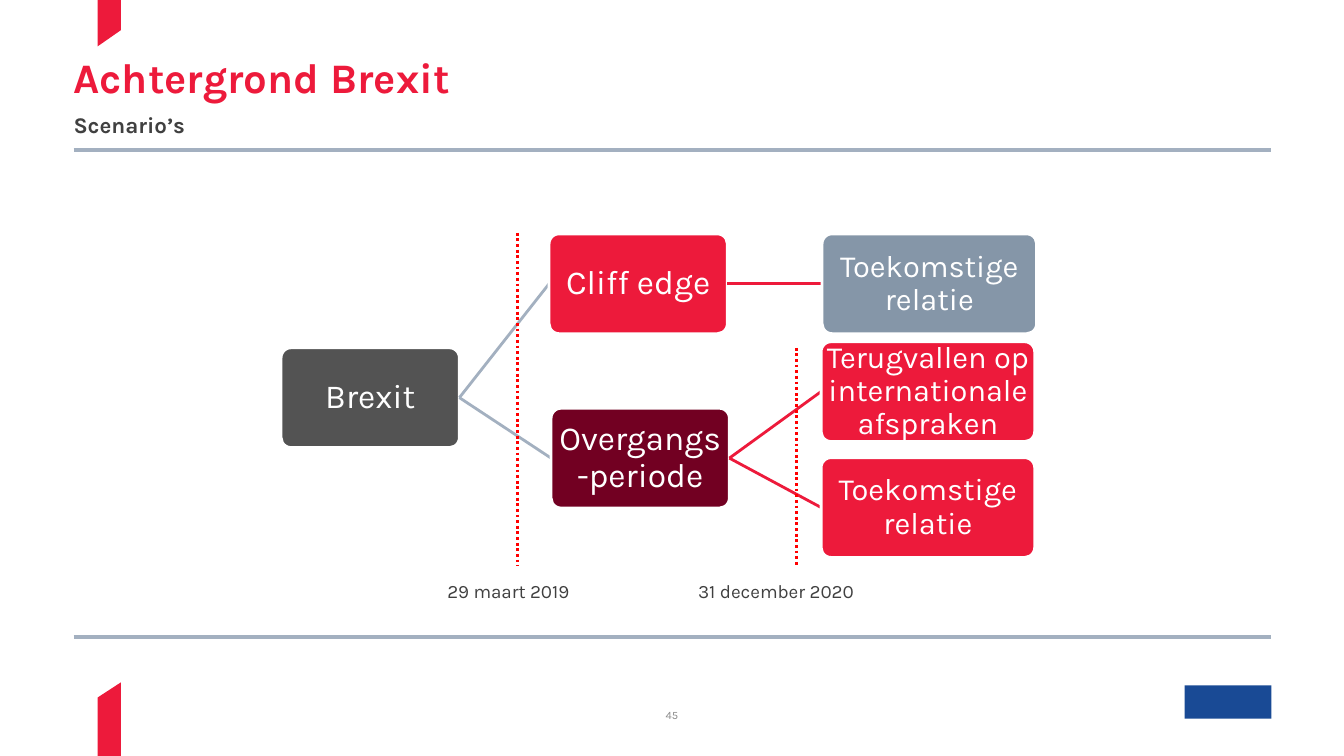
import pptx
import pptx.dml.color
import pptx.enum.dml
import pptx.enum.shapes
import pptx.enum.text
import pptx.oxml.ns
import pptx.util
from lxml import etree

Inches = pptx.util.Inches
Pt = pptx.util.Pt
RGBColor = pptx.dml.color.RGBColor
SHAPE = pptx.enum.shapes.MSO_SHAPE
ALIGN = pptx.enum.text.PP_ALIGN
ANCHOR = pptx.enum.text.MSO_ANCHOR

RED = RGBColor(0xED, 0x1A, 0x3B)
DOT_RED = RGBColor(0xFF, 0x00, 0x00)
BURGUNDY = RGBColor(0x72, 0x00, 0x22)
CHARCOAL = RGBColor(0x53, 0x53, 0x53)
TEXT_GREY = RGBColor(0x40, 0x40, 0x40)
PAGE_GREY = RGBColor(0x8C, 0x8C, 0x8C)
SLATE = RGBColor(0x85, 0x96, 0xA8)
PALE_SLATE = RGBColor(0xA3, 0xB0, 0xC0)
NAVY = RGBColor(0x19, 0x4A, 0x95)
WHITE = RGBColor(0xFF, 0xFF, 0xFF)

FONT = "Karla"
MARGIN, CONTENT_WIDTH = 0.73, 11.89
NODE_HEIGHT = 0.99


def set_text(shape, text, size, color, bold=False, align=ALIGN.LEFT,
             anchor=ANCHOR.TOP, inset=0, wrap=True):
    frame = shape.text_frame
    frame.word_wrap = wrap
    frame.vertical_anchor = anchor
    frame.margin_left = frame.margin_right = Inches(inset)
    frame.margin_top = frame.margin_bottom = Inches(inset)
    paragraph = frame.paragraphs[0]
    paragraph.text = text
    paragraph.alignment = align
    paragraph.font.name = FONT
    paragraph.font.size = Pt(size)
    paragraph.font.bold = bold
    paragraph.font.color.rgb = color
    return paragraph


def add_label(slide, left, top, width, height, text, size, color, **style):
    label = slide.shapes.add_textbox(Inches(left), Inches(top), Inches(width), Inches(height))
    set_text(label, text, size, color, **style)


def add_rule(slide, start, end, color, weight):
    rule = slide.shapes.add_connector(
        pptx.enum.shapes.MSO_CONNECTOR.STRAIGHT, *(Inches(value) for value in start + end))
    rule.line.color.rgb = color
    rule.line.width = Pt(weight)
    etree.SubElement(rule._element.spPr, pptx.oxml.ns.qn("a:effectLst"))
    return rule


def fill_plain(shape, color):
    shape.shadow.inherit = False
    shape.fill.solid()
    shape.fill.fore_color.rgb = color
    shape.line.fill.background()


def add_ribbon(slide, left, outer, long_end, short_end):
    right = left + 0.23
    builder = slide.shapes.build_freeform(Inches(left), Inches(outer))
    corners = [(right, outer), (right, short_end), (left, long_end)]
    builder.add_line_segments([(Inches(x), Inches(y)) for x, y in corners], close=True)
    fill_plain(builder.convert_to_shape(), RED)


def add_frame(slide, left, width):
    add_ribbon(slide, left + 0.24, 7.5, 6.92, 6.77)
    add_ribbon(slide, left + 0.24, 0, 0.46, 0.3)
    emblem = slide.shapes.add_shape(
        SHAPE.RECTANGLE, Inches(left + width - 0.86), Inches(6.8), Inches(0.86), Inches(0.33))
    fill_plain(emblem, NAVY)
    for y in (1.49, 6.32):
        add_rule(slide, (left, y), (left + width, y), PALE_SLATE, 3)
    add_label(slide, 6.31, 6.89, 0.72, 0.4, "45", 8, PAGE_GREY,
              align=ALIGN.CENTER, anchor=ANCHOR.MIDDLE)


def add_heading(slide, left, top, width):
    add_label(slide, left, top, width, 0.58, "Achtergrond Brexit", 30, RED, bold=True)
    add_label(slide, left, top + 0.59, width, 0.35, "Scenario’s", 16, TEXT_GREY, bold=True)


def add_node(slide, left, top, width, text, size, color, parent=None, branch_color=None):
    if parent is not None:
        branch = add_rule(slide, (left, top), (left, top), branch_color, 2)
        branch.begin_connect(parent, 3)
    node = slide.shapes.add_shape(
        SHAPE.ROUNDED_RECTANGLE, Inches(left), Inches(top), Inches(width), Inches(NODE_HEIGHT))
    fill_plain(node, color)
    node.adjustments[0] = 0.1
    node.line.color.rgb = WHITE
    node.line.width = Pt(2)
    paragraph = set_text(node, text, size, WHITE, align=ALIGN.CENTER,
                         anchor=ANCHOR.MIDDLE, inset=0.02)
    paragraph.line_spacing = 0.9
    if parent is not None:
        branch.end_connect(node, 1)
    return node


def add_scenario_tree(slide, left, top):
    outcome_left = left + 5.36
    brexit = add_node(slide, left, top + 1.13, 1.77, "Brexit", 24, CHARCOAL)
    cliff = add_node(slide, left + 2.66, top, 1.77, "Cliff edge", 24, RED, brexit, PALE_SLATE)
    add_node(slide, outcome_left + 0.01, top, 2.13, "Toekomstige relatie", 22, SLATE, cliff, RED)
    transition = add_node(slide, left + 2.68, top + 1.73, 1.77, "Overgangs-periode", 24,
                          BURGUNDY, brexit, PALE_SLATE)
    add_node(slide, outcome_left, top + 1.07, 2.12, "Terugvallen op internationale afspraken",
             22, RED, transition, RED)
    add_node(slide, outcome_left, top + 2.22, 2.12, "Toekomstige relatie", 22, RED,
             transition, RED)


def add_deadline(slide, x, top, bottom, date_left, date):
    deadline = add_rule(slide, (x, top), (x, bottom), DOT_RED, 2)
    deadline.line.dash_style = pptx.enum.dml.MSO_LINE.ROUND_DOT
    add_label(slide, date_left, bottom + 0.13, 1.6, 0.23, date, 13.5, TEXT_GREY, wrap=False)


def main():
    deck = pptx.Presentation()
    deck.slide_width, deck.slide_height = Inches(13.34), Inches(7.5)
    slide = deck.slides.add_slide(deck.slide_layouts[6])
    add_frame(slide, MARGIN, CONTENT_WIDTH)
    add_heading(slide, MARGIN, 0.51, CONTENT_WIDTH)
    add_scenario_tree(slide, 2.79, 2.32)
    add_deadline(slide, 5.14, 2.31, 5.62, 4.44, "29 maart 2019")
    add_deadline(slide, 7.91, 3.45, 5.62, 6.93, "31 december 2020")
    deck.save("out.pptx")


if __name__ == "__main__":
    main()
